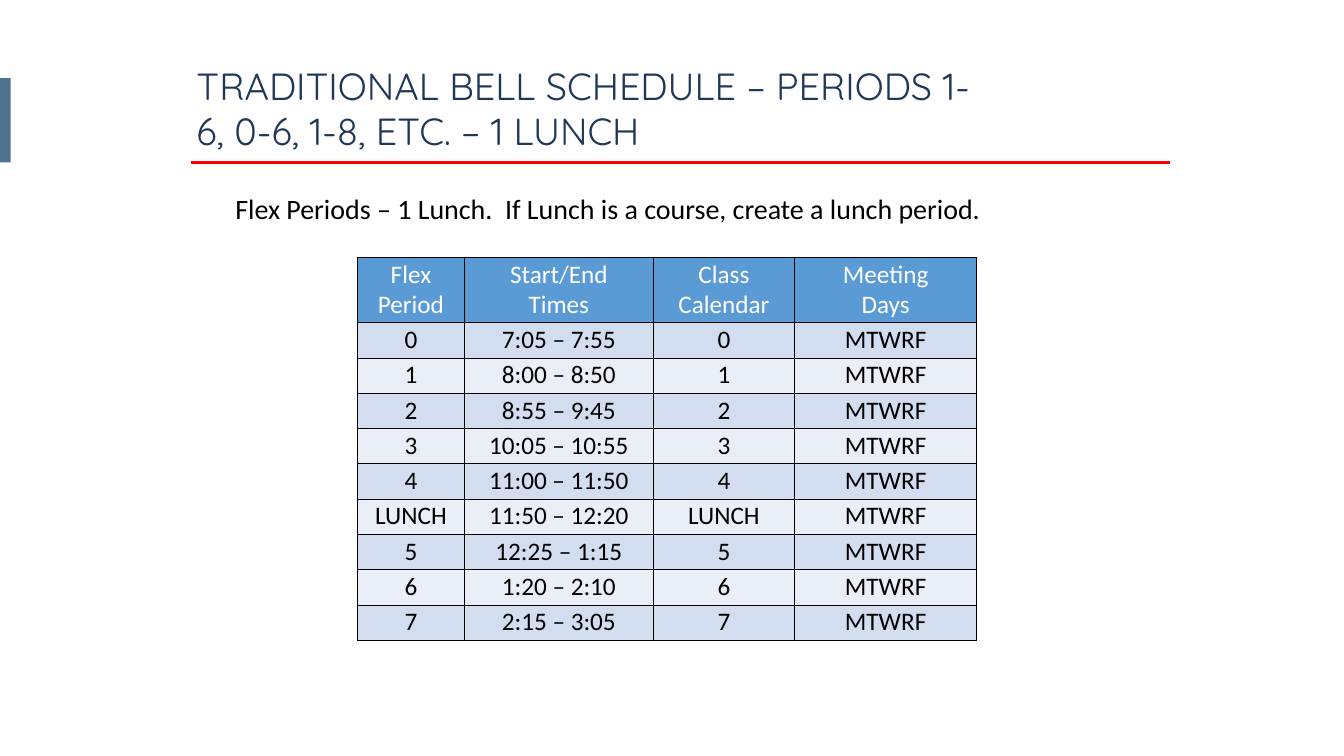
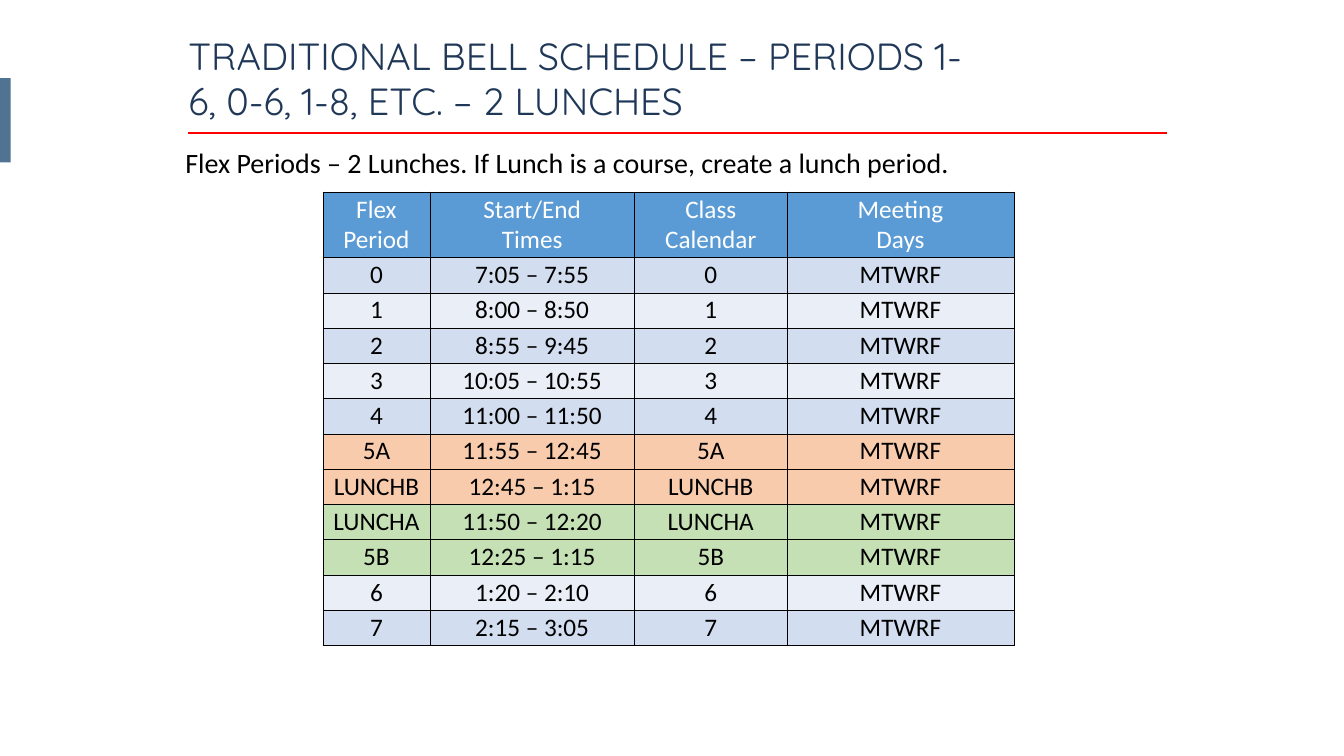
"""Build two slides of traditional bell schedules with one lunch and with two lunches."""
import dataclasses

import lxml.etree
import pptx
import pptx.dml.color
import pptx.enum.shapes
import pptx.enum.text
import pptx.oxml.ns
import pptx.util

PX = 9144


@dataclasses.dataclass(frozen=True)
class Theme:
    title_font: str = "Quicksand"
    body_font: str = "Calibri"
    title_size: int = 54
    body_size: int = 40
    table_size: int = 36
    title: str = "203858"
    text: str = "000000"
    header_text: str = "FFFFFF"
    rule: str = "FF0000"
    accent: str = "507392"
    header: str = "5B9BD5"
    dark_band: str = "D2DEEF"
    light_band: str = "EAEFF7"
    lunch_b: str = "F8CBAD"
    lunch_a: str = "C5E0B4"
    border: str = "000000"


theme = Theme()
rgb = pptx.dml.color.RGBColor.from_string
qn = pptx.oxml.ns.qn


def write(paragraph, text, font, size, color):
    run = paragraph.add_run()
    run.text = text
    run.font.name = font
    run.font.size = pptx.util.Pt(size)
    run.font.color.rgb = rgb(color)


def add_borders(cell):
    properties = cell._tc.get_or_add_tcPr()
    for index, side in enumerate(("lnL", "lnR", "lnT", "lnB")):
        line = lxml.etree.Element(qn("a:" + side), w="12700")
        fill = lxml.etree.SubElement(line, qn("a:solidFill"))
        lxml.etree.SubElement(fill, qn("a:srgbClr"), val=theme.border)
        properties.insert(index, line)


HEADERS = ["Flex\nPeriod", "Start/End\nTimes", "Class\nCalendar", "Meeting\nDays"]
MEETING_DAYS = "MTWRF"
HEADER_HEIGHT, ROW_HEIGHT = 130, 70

morning = [
    ("0", "7:05 – 7:55"),
    ("1", "8:00 – 8:50"),
    ("2", "8:55 – 9:45"),
    ("3", "10:05 – 10:55"),
    ("4", "11:00 – 11:50"),
]
afternoon = [("6", "1:20 – 2:10"), ("7", "2:15 – 3:05")]
one_lunch = [("LUNCH", "11:50 – 12:20"), ("5", "12:25 – 1:15")]
two_lunches = [
    ("5A", "11:55 – 12:45"),
    ("LUNCHB", "12:45 – 1:15"),
    ("LUNCHA", "11:50 – 12:20"),
    ("5B", "12:25 – 1:15"),
]
lunch_fills = {
    "5A": theme.lunch_b,
    "LUNCHB": theme.lunch_b,
    "LUNCHA": theme.lunch_a,
    "5B": theme.lunch_a,
}

schedules = [
    {
        "title": "TRADITIONAL BELL SCHEDULE – PERIODS 1-6, 0-6, 1-8, ETC. – 1 LUNCH",
        "title_at": (380, 119),
        "rule_at": (380, 322),
        "note": "Flex Periods – 1 Lunch.  If Lunch is a course, create a lunch period.",
        "note_at": (457, 375),
        "table_at": (709, 510),
        "columns": (213, 374, 281, 361),
        "periods": morning + one_lunch + afternoon,
    },
    {
        "title": "TRADITIONAL BELL SCHEDULE – PERIODS 1-6, 0-6, 1-8, ETC. – 2 LUNCHES",
        "title_at": (364, 59),
        "rule_at": (374, 264),
        "note": "Flex Periods – 2 Lunches. If Lunch is a course, create a lunch period.",
        "note_at": (358, 284),
        "table_at": (641, 381),
        "columns": (212, 406, 303, 450),
        "periods": morning + two_lunches + afternoon,
    },
]

presentation = pptx.Presentation()
presentation.slide_width = 2667 * PX
presentation.slide_height = 1500 * PX

for schedule in schedules:
    slide = presentation.slides.add_slide(presentation.slide_layouts[6])

    left, top = schedule["rule_at"]
    rule = slide.shapes.add_connector(
        pptx.enum.shapes.MSO_CONNECTOR.STRAIGHT,
        left * PX, top * PX, (left + 1941) * PX, top * PX,
    )
    rule.line.color.rgb = rgb(theme.rule)
    rule.line.width = pptx.util.Pt(4)
    lxml.etree.SubElement(rule._element.spPr, qn("a:effectLst"))

    accent = slide.shapes.add_shape(
        pptx.enum.shapes.MSO_SHAPE.RECTANGLE, 0, 155 * PX, 21 * PX, 167 * PX
    )
    accent.shadow.inherit = False
    accent.fill.solid()
    accent.fill.fore_color.rgb = rgb(theme.accent)
    accent.line.fill.background()

    for part, width, height, font, size, color in (
        ("note", 1738, 77, theme.body_font, theme.body_size, theme.text),
        ("title", 1557, 192, theme.title_font, theme.title_size, theme.title),
    ):
        left, top = schedule[part + "_at"]
        box = slide.shapes.add_textbox(left * PX, top * PX, width * PX, height * PX)
        box.text_frame.word_wrap = True
        box.text_frame.auto_size = pptx.enum.text.MSO_AUTO_SIZE.SHAPE_TO_FIT_TEXT
        paragraph = box.text_frame.paragraphs[0]
        paragraph.space_after = pptx.util.Pt(12)
        write(paragraph, schedule[part], font, size, color)

    rows = [HEADERS]
    rows += [(period, times, period, MEETING_DAYS) for period, times in schedule["periods"]]
    columns = schedule["columns"]
    left, top = schedule["table_at"]
    height = HEADER_HEIGHT + ROW_HEIGHT * len(schedule["periods"])
    table = slide.shapes.add_table(
        len(rows), len(columns), left * PX, top * PX, sum(columns) * PX, height * PX
    ).table
    table.first_row = False
    table.horz_banding = False
    for column, width in zip(table.columns, columns):
        column.width = width * PX

    for row_index, values in enumerate(rows):
        is_header = row_index == 0
        table.rows[row_index].height = (HEADER_HEIGHT if is_header else ROW_HEIGHT) * PX
        band = theme.dark_band if row_index % 2 else theme.light_band
        fill = theme.header if is_header else lunch_fills.get(values[0], band)
        color = theme.header_text if is_header else theme.text
        for column_index, value in enumerate(values):
            cell = table.cell(row_index, column_index)
            cell.margin_top = cell.margin_bottom = 4 * PX
            cell.fill.solid()
            cell.fill.fore_color.rgb = rgb(fill)
            add_borders(cell)
            for line_index, text in enumerate(value.split("\n")):
                frame = cell.text_frame
                paragraph = frame.add_paragraph() if line_index else frame.paragraphs[0]
                paragraph.alignment = pptx.enum.text.PP_ALIGN.CENTER
                write(paragraph, text, theme.body_font, theme.table_size, color)

presentation.save("out.pptx")
